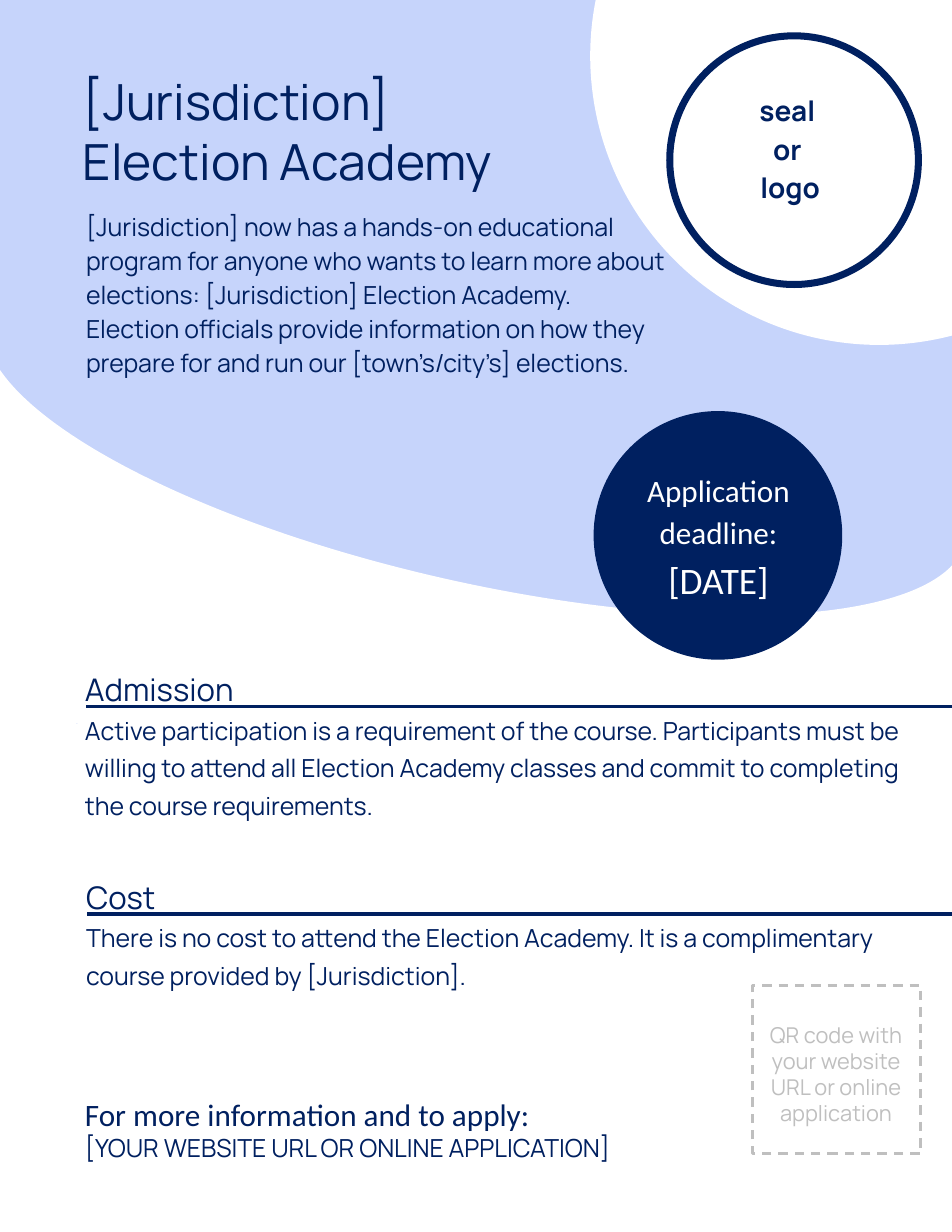
import copy

import pptx
import pptx.dml.color
import pptx.enum.dml
import pptx.enum.shapes
import pptx.enum.text
import pptx.oxml
import pptx.oxml.ns
import pptx.util

Inches = pptx.util.Inches
Pt = pptx.util.Pt
KIND = pptx.enum.shapes.MSO_SHAPE
ALIGN = pptx.enum.text.PP_ALIGN
NAVY, PALE, WHITE, GRAY = "002060", "C6D4FB", "FFFFFF", "BFBFBF"
SANS, BODY = "Manrope", "Calibri"


def tint(form, code):
    """Give a fill or a font colour a solid hex colour."""
    if hasattr(form, "solid"):
        form.solid()
        form = form.fore_color
    form.rgb = pptx.dml.color.RGBColor.from_string(code)


def place(box):
    """Turn a box in inches into lengths."""
    return [Inches(side) for side in box]


def shape(shapes, kind, box, fill=None, line=None, width=1):
    """Add a flat preset shape with an optional fill and outline."""
    item = shapes.add_shape(kind, *place(box))
    item.shadow.inherit = False
    if fill:
        tint(item.fill, fill)
    else:
        item.fill.background()
    if line:
        tint(item.line.fill, line)
        item.line.width = Pt(width)
    else:
        item.line.fill.background()
    return item


def write(item, paras, code=NAVY, align=ALIGN.LEFT, space=None, bold=False):
    """Fill an item with paragraphs, each a list of (text, size, font) runs."""
    frame = item.text_frame
    frame.word_wrap = True
    frame.auto_size = pptx.enum.text.MSO_AUTO_SIZE.SHAPE_TO_FIT_TEXT
    frame.vertical_anchor = pptx.enum.text.MSO_ANCHOR.TOP
    for place_no, runs in enumerate(paras):
        para = frame.add_paragraph() if place_no else frame.paragraphs[0]
        para.alignment = align
        if space:
            para.line_spacing = space
        for run_no, (words, size, face) in enumerate(runs):
            if run_no:
                para.add_line_break()
                mark = copy.deepcopy(para.runs[-1].font._element)
                para._p[-1].append(mark)
            run = para.add_run()
            run.text = words
            run.font.size = Pt(size)
            run.font.name = face
            run.font.bold = bold
            tint(run.font.color, code)


def label(shapes, box, paras, **look):
    """Add a text box with the given paragraphs."""
    item = shapes.add_textbox(*place(box))
    write(item, paras, **look)
    return item


def rule(shapes, left, top, width):
    """Draw a level navy line."""
    ends = place((left, top, left + width, top))
    item = shapes.add_connector(pptx.enum.shapes.MSO_CONNECTOR.STRAIGHT, *ends)
    tint(item.line.fill, NAVY)
    item.line.width = Pt(2.25)
    item._element.spPr.append(pptx.oxml.parse_xml(
        "<a:effectLst %s/>" % pptx.oxml.ns.nsdecls("a")))


def banner(slide, box):
    """Build the pale curved header with its title and intro."""
    left, top, width, height = box
    shapes = slide.shapes
    shape(shapes, KIND.RECTANGLE, box, PALE)
    shape(shapes, KIND.OVAL, (left + 5.27, top - 2.08, 5.16, 5.16), WHITE)
    title = shapes.title
    title.left, title.top, title.width, title.height = place(
        (left + 0.64, top + 0.58, 4.61, 1.18))
    write(title, [[("[Jurisdiction] ", 32, SANS), ("Election Academy", 32, SANS)]])
    title._element.getparent().append(title._element)
    intro = (
        "[Jurisdiction] now has a hands-on educational program for anyone who "
        "wants to learn more about elections: [Jurisdiction] Election Academy. "
        "Election officials provide information on how they prepare for and run "
        "our [town’s/city’s] elections.")
    label(shapes, (left + 0.67, top + 1.8, 5.38, 1.93), [[(intro, 16, SANS)]],
          space=1.14)
    curve = shape(shapes, KIND.BLOCK_ARC,
                  (left - 2.57, top + 0.14, 13.64, 7.39), WHITE)
    curve.rotation = 192.8
    for spot, value in enumerate((108, 213.955, 0.316)):
        curve.adjustments[spot] = value
    shape(shapes, KIND.RECTANGLE, (left - 0.08, top + 5.79, 0.76, 0.9), WHITE)


def badge(shapes, box):
    """Build the round deadline badge."""
    left, top, width, height = box
    shape(shapes, KIND.OVAL, box, NAVY)
    label(shapes, (left + 0.06, top + 0.44, width - 0.11, 1.31),
          [[("Application deadline:", 20, BODY)], [("[DATE]", 24, BODY)]],
          code=WHITE, align=ALIGN.CENTER, space=1.14)


def section(shapes, box, head, words):
    """Build a ruled heading with its text."""
    left, top, width, height = box
    label(shapes, box, [[(head, 20, SANS), (words, 16, SANS)]], space=Pt(24))
    rule(shapes, left + 0.11, top + 0.37, 7.84)


def contact(shapes, box):
    """Build the line on where to apply."""
    label(shapes, box, [
        [("For more information and to apply:", 20, BODY)],
        [("[YOUR WEBSITE URL OR ONLINE APPLICATION]", 16, SANS)]])


def code_box(shapes, box):
    """Build the dashed frame that holds room for a code."""
    left, top, width, height = box
    frame = shape(shapes, KIND.RECTANGLE, box, line=GRAY, width=1.5)
    frame.line.dash_style = pptx.enum.dml.MSO_LINE.DASH
    words = "QR code with your website URL or online application"
    label(shapes, (left - 0.06, top + 0.27, width + 0.11, 1.04),
          [[(words, 14, SANS)]], code=GRAY, align=ALIGN.CENTER)


def seal(shapes, box):
    """Build the grouped ring that holds room for a seal."""
    left, top, width, height = box
    parts = shapes.add_group_shape().shapes
    shape(parts, KIND.OVAL, box, line=NAVY, width=4.5)
    words = [(word, 18, SANS) for word in ("seal ", "or ", "logo")]
    item = label(parts, (left + 0.51, top + 0.42, 1.13, 1.37), [words],
                 align=ALIGN.CENTER, space=1.15, bold=True)
    tint(item.fill, WHITE)


def main():
    """Build and save the flyer."""
    deck = pptx.Presentation()
    deck.slide_width, deck.slide_height = Inches(8.5), Inches(11)
    slide = deck.slides.add_slide(deck.slide_layouts[5])
    shapes = slide.shapes
    banner(slide, (0, 0, 8.5, 6.46))
    section(shapes, (0.66, 5.94, 7.5, 1.43), "Admission",
            "Active participation is a requirement of the course. Participants "
            "must be willing to attend all Election Academy classes and commit "
            "to completing the course requirements.")
    badge(shapes, (5.3, 3.67, 2.22, 2.22))
    section(shapes, (0.67, 7.79, 7.49, 1.09), "Cost",
            "There is no cost to attend the Election Academy. It is a "
            "complimentary course provided by [Jurisdiction].")
    contact(shapes, (0.66, 9.73, 5.98, 0.71))
    code_box(shapes, (6.72, 8.8, 1.5, 1.5))
    seal(shapes, (5.98, 0.32, 2.22, 2.22))
    deck.save("out.pptx")


if __name__ == "__main__":
    main()
